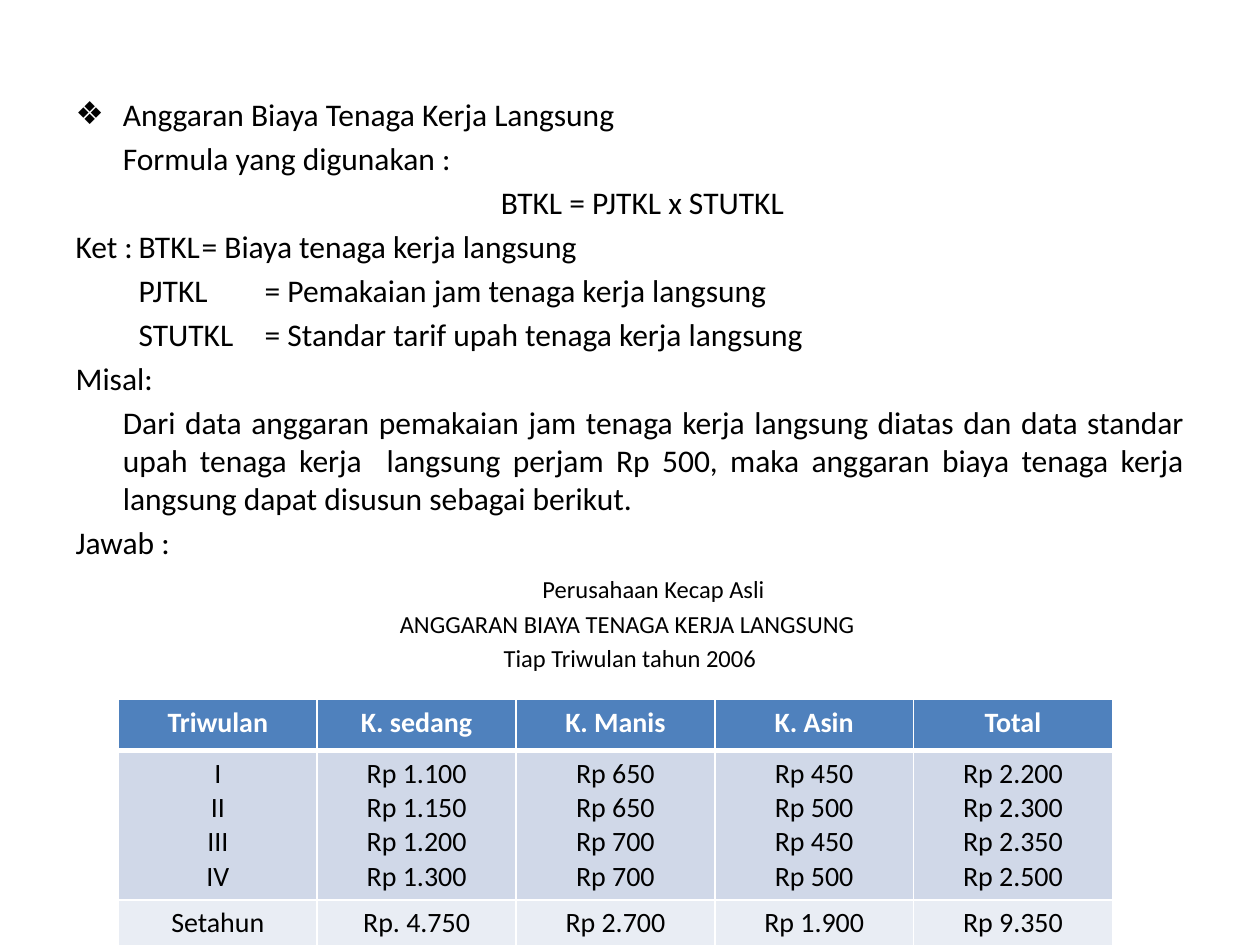
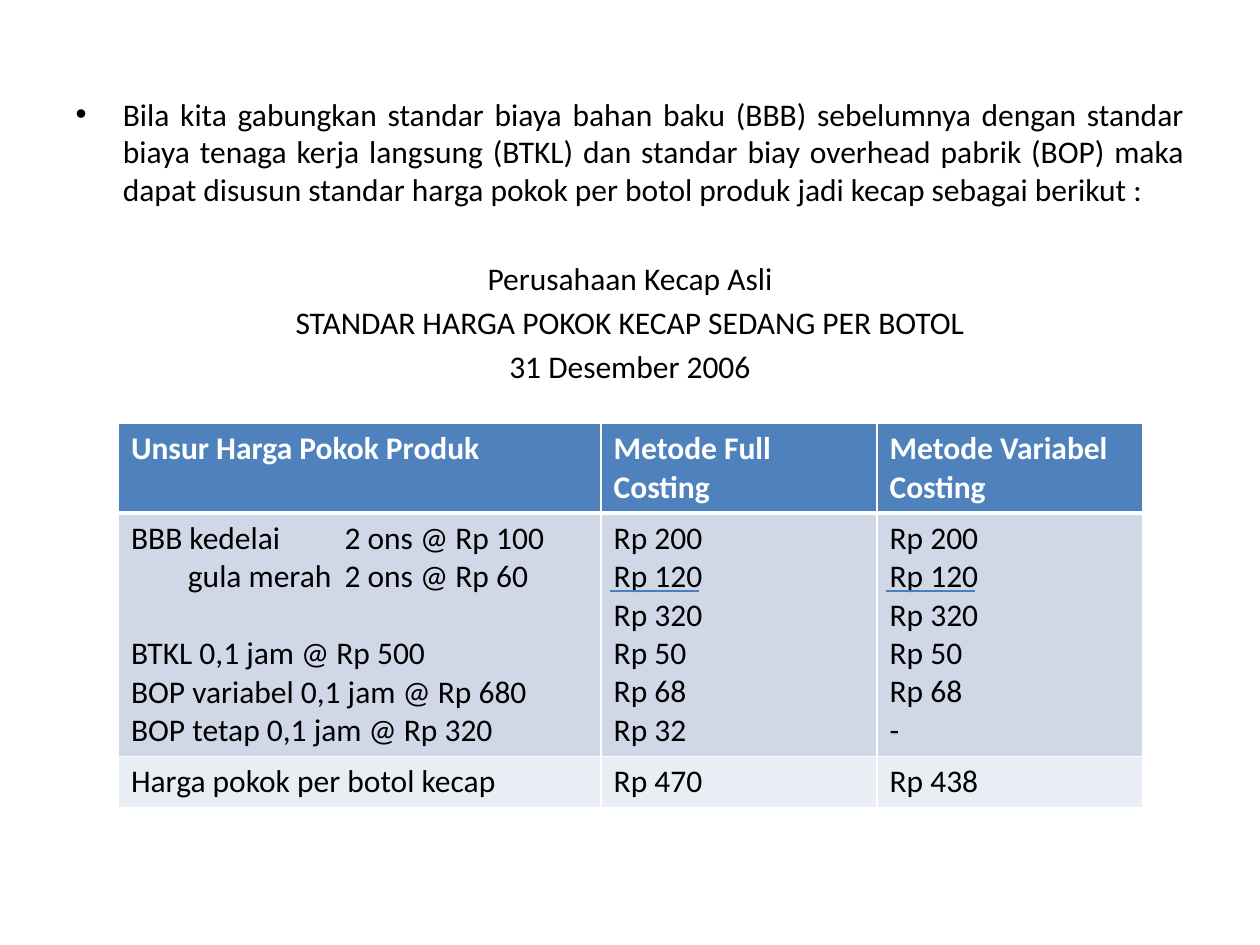
from lxml import etree
from pptx import Presentation
from pptx import util as u
from pptx.dml import color
from pptx.enum import shapes, text
from pptx.oxml import ns

FONT = "Calibri"
BLACK, WHITE, RULE = "000000", "FFFFFF", "4B7EBC"
ROW_FILLS = ["4F81BD", "D0D8E8", "E9EDF4"]  # header, detail, total
LEFT, JUSTIFY, CENTER = (text.PP_ALIGN.LEFT, text.PP_ALIGN.JUSTIFY,
                         text.PP_ALIGN.CENTER)
HANG = 27
TABLE_LEFT = 67.7
TERM_TABS = [99, 171]
COST_TABS = [32.5, 122]


def rgb(value):
    return color.RGBColor.from_string(value)


def add_node(parent, tag, **attributes):
    return etree.SubElement(parent, ns.qn(tag), attributes)


def set_format(target, values):
    for name, value in values.items():
        setattr(target, name, value)


def set_tabs(paragraph, stops):
    tab_list = add_node(paragraph._p.get_or_add_pPr(), "a:tabLst")
    for stop in stops:
        add_node(tab_list, "a:tab", pos=str(u.Pt(stop)), algn="l")


def write_run(paragraph, words, size, ink=BLACK, bold=False):
    run = paragraph.add_run()
    run.text = words
    set_format(run.font, {"name": FONT, "size": u.Pt(size), "bold": bold})
    run.font.color.rgb = rgb(ink)


def fill_paragraph(paragraph, words, size=18, align=JUSTIFY, bullet=None,
                   margin=0, before=None, tabs=()):
    """Write one body paragraph, with or without a hanging bullet."""
    paragraph.alignment = align
    if before is not None:
        paragraph.space_before = u.Pt(before)
    properties = paragraph._p.get_or_add_pPr()
    properties.set("marL", str(u.Pt(HANG if bullet else margin)))
    properties.set("indent", str(u.Pt(-HANG if bullet else 0)))
    if bullet:
        add_node(properties, "a:buChar", char=bullet)
    else:
        add_node(properties, "a:buNone")
    if tabs:
        set_tabs(paragraph, tabs)
    write_run(paragraph, words, size)


def add_body_slide(presentation, paragraphs):
    slide = presentation.slides.add_slide(presentation.slide_layouts[1])
    title = slide.shapes.title
    title._element.getparent().remove(title._element)
    body = slide.placeholders[1]
    set_format(body, {"left": u.Pt(36), "top": u.Pt(50.4),
                      "width": u.Pt(648), "height": u.Pt(432)})
    for index, (words, options) in enumerate(paragraphs):
        frame = body.text_frame
        paragraph = frame.add_paragraph() if index else frame.paragraphs[0]
        fill_paragraph(paragraph, words, **options)
    return slide


def set_borders(cell, row):
    """White grid with a thick line under the header row."""
    properties = cell._tc.get_or_add_tcPr()
    widths = {"a:lnL": 1, "a:lnR": 1, "a:lnT": 3 if row == 1 else 1,
              "a:lnB": 3 if row == 0 else 1}
    for index, (tag, width) in enumerate(widths.items()):
        line = add_node(properties, tag, w=str(u.Pt(width)))
        add_node(add_node(line, "a:solidFill"), "a:srgbClr", val=WHITE)
        properties.insert(index, line)


def add_grid(slide, top, widths, heights, rows, size, align):
    """Add a table; a cell holds one line per paragraph."""
    table = slide.shapes.add_table(
        len(rows), len(widths), u.Pt(TABLE_LEFT), u.Pt(top),
        u.Pt(sum(widths)), u.Pt(sum(heights))).table
    for column, width in zip(table.columns, widths):
        column.width = u.Pt(width)
    for row, (height, contents) in enumerate(zip(heights, rows)):
        table.rows[row].height = u.Pt(height)
        for column, content in enumerate(contents):
            cell = table.cell(row, column)
            cell.fill.solid()
            cell.fill.fore_color.rgb = rgb(ROW_FILLS[row])
            set_borders(cell, row)
            frame = cell.text_frame
            for index, words in enumerate(content.split("\n")):
                paragraph = (frame.add_paragraph() if index
                             else frame.paragraphs[0])
                paragraph.alignment = align
                write_run(paragraph, words, size,
                          BLACK if row else WHITE, row == 0)
    return table


def add_sum_line(slide, left, top, length):
    line = slide.shapes.add_connector(
        shapes.MSO_CONNECTOR.STRAIGHT, u.Pt(left), u.Pt(top),
        u.Pt(left + length), u.Pt(top))
    line.line.color.rgb = rgb(RULE)
    line.line.width = u.Pt(0.75)
    add_node(line._element.spPr, "a:effectLst")


def add_labour_budget(presentation):
    term = {"align": LEFT, "tabs": TERM_TABS}
    caption = {"size": 14, "align": CENTER}
    slide = add_body_slide(presentation, [
        ("Anggaran Biaya Tenaga Kerja Langsung", {"bullet": "❖"}),
        ("Formula yang digunakan :", {"margin": HANG}),
        ("BTKL = PJTKL x STUTKL", {"margin": 243, "align": LEFT}),
        ("Ket :\tBTKL\t= Biaya tenaga kerja langsung", term),
        ("\tPJTKL\t= Pemakaian jam tenaga kerja langsung", term),
        ("\tSTUTKL\t= Standar tarif upah tenaga kerja langsung", term),
        ("Misal:", {}),
        ("Dari data anggaran pemakaian jam tenaga kerja langsung diatas dan "
         "data standar upah tenaga kerja  langsung perjam Rp 500, maka "
         "anggaran biaya tenaga kerja langsung dapat disusun sebagai "
         "berikut.", {"margin": HANG}),
        ("Jawab :", {}),
        ("Perusahaan Kecap Asli", {**caption, "margin": HANG, "before": 7.4}),
        ("ANGGARAN BIAYA TENAGA KERJA LANGSUNG ",
         {**caption, "before": 3.5}),
        ("Tiap Triwulan tahun 2006", caption),
    ])
    add_grid(slide, 399.6, [113.6] * 5, [29.2, 85.3, 29.2], [
        ["Triwulan", "K. sedang", "K. Manis", "K. Asin", "Total"],
        ["I\nII\nIII\nIV",
         "Rp 1.100\nRp 1.150\nRp 1.200\nRp 1.300",
         "Rp 650\nRp 650\nRp 700\nRp 700",
         "Rp 450\nRp 500\nRp 450\nRp 500",
         "Rp 2.200\nRp 2.300\nRp 2.350\nRp 2.500"],
        ["Setahun", "Rp. 4.750", "Rp 2.700", "Rp 1.900", "Rp 9.350"],
    ], 16, CENTER)


def add_standard_cost(presentation):
    caption = {"align": CENTER}
    slide = add_body_slide(presentation, [
        ("Bila kita gabungkan standar biaya bahan baku (BBB) sebelumnya "
         "dengan standar biaya tenaga kerja langsung (BTKL) dan standar biay "
         "overhead pabrik (BOP) maka dapat disusun standar harga pokok per "
         "botol produk jadi kecap sebagai berikut :", {"bullet": "•"}),
        ("Perusahaan Kecap Asli", {**caption, "before": 29}),
        ("STANDAR HARGA POKOK KECAP SEDANG PER BOTOL", caption),
        ("31 Desember 2006", caption),
    ])
    widths = [275.8, 157.7, 151.9]
    table = add_grid(slide, 241.9, widths, [51.1, 139, 29.2], [
        ["Unsur Harga Pokok Produk", "Metode Full Costing",
         "Metode Variabel Costing"],
        ["BBB kedelai\t2 ons @ Rp 100\n\tgula merah\t2 ons @ Rp 60\n"
         "BTKL 0,1 jam @ Rp 500\nBOP variabel 0,1 jam @ Rp 680\n"
         "BOP tetap 0,1 jam @ Rp 320",
         "Rp 200\nRp 120\nRp 320\nRp 50\nRp 68\nRp 32",
         "Rp 200\nRp 120\nRp 320\nRp 50\nRp 68\n-"],
        ["Harga pokok per botol kecap", "Rp 470", "Rp 438"],
    ], 18, LEFT)
    # Align the material quantities and leave room beside the subtotal
    costs = table.cell(1, 0).text_frame.paragraphs
    for paragraph in costs[:2]:
        set_tabs(paragraph, COST_TABS)
    costs[2].space_before = u.Pt(22)
    # Subtotal lines in both method columns
    for column in (1, 2):
        add_sum_line(slide, TABLE_LEFT + sum(widths[:column]) + 5, 337.7, 51)


def main():
    presentation = Presentation()
    set_format(presentation, {"slide_width": u.Pt(720),
                              "slide_height": u.Pt(540)})
    add_labour_budget(presentation)
    add_standard_cost(presentation)
    presentation.save("out.pptx")


if __name__ == "__main__":
    main()
